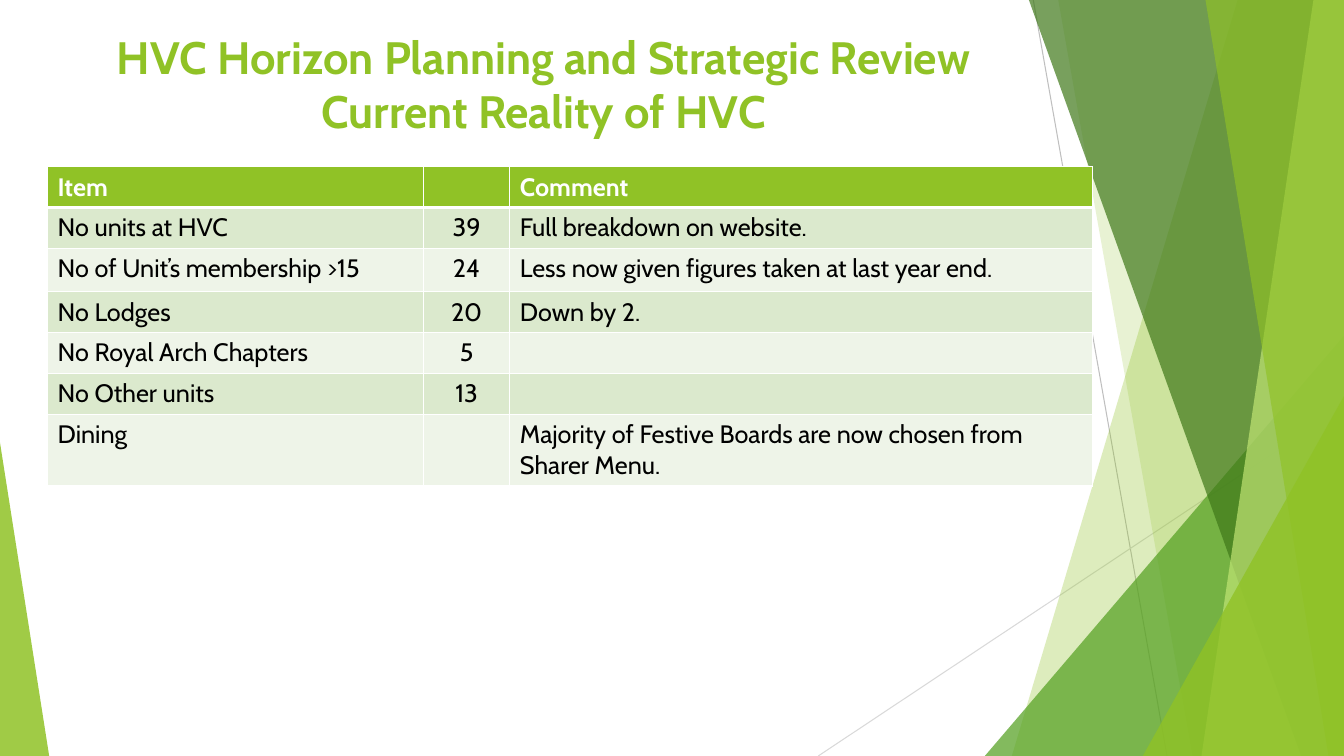
from lxml import etree
from pptx import Presentation
from pptx.dml.color import RGBColor
from pptx.enum import shapes, text
from pptx.oxml import ns
from pptx.util import Cm, Pt

LIME = RGBColor(0x90, 0xC2, 0x26)
PALE_LIME = RGBColor(0xC0, 0xE4, 0x74)
GREEN = RGBColor(0x54, 0xA0, 0x21)
FOREST = RGBColor(0x3F, 0x78, 0x19)
DARK_BAND = RGBColor(0xDB, 0xE9, 0xCD)
LIGHT_BAND = RGBColor(0xEE, 0xF4, 0xE8)
GREY = RGBColor(0xBF, 0xBF, 0xBF)
LIGHT_GREY = RGBColor(0xD9, 0xD9, 0xD9)
WHITE = RGBColor(0xFF, 0xFF, 0xFF)
BLACK = RGBColor(0, 0, 0)
WIDTH, HEIGHT = 33.87, 19.05


def write(frame, words, size=18, color=BLACK, bold=False, align=text.PP_ALIGN.LEFT):
    paragraph = frame.paragraphs[0]
    paragraph.text = words
    paragraph.alignment = align
    paragraph.font.size = Pt(size)
    for run in paragraph.runs:
        run.font.name = "Cabin"
        run.font.size = Pt(size)
        run.font.bold = bold
        run.font.color.rgb = color


def paint(facet, color, opacity):
    facet.shadow.inherit = False
    facet.line.fill.background()
    facet.fill.solid()
    facet.fill.fore_color.rgb = color
    tint = facet.fill._xPr.find(ns.qn("a:solidFill"))[0]
    etree.SubElement(tint, ns.qn("a:alpha"), val=str(opacity * 1000))


deck = Presentation()
deck.slide_width, deck.slide_height = Cm(WIDTH), Cm(HEIGHT)
slide = deck.slides.add_slide(deck.slide_layouts[5])

for x1, y1, x2, y2, color in [
    (26.04, 0, 29.41, HEIGHT, GREY),
    (WIDTH, 10.24, 20.62, HEIGHT, LIGHT_GREY),
]:
    ray = slide.shapes.add_connector(
        shapes.MSO_CONNECTOR.STRAIGHT, Cm(x1), Cm(y1), Cm(x2), Cm(y2))
    ray.line.color.rgb = color
    ray.line.width = Pt(0.75)
    etree.SubElement(ray._element.spPr, ns.qn("a:effectLst"))

facets = [
    ("band", 31.19, 25.5, LIME, 30),
    ("band", 26.67, 30.05, LIME, 20),
    ("triangle", 24.82, 8.46, 9.05, 1, GREEN, 72),
    ("band", 25.93, 32.79, FOREST, 70),
    ("band", 33.1, 30.28, PALE_LIME, 70),
    ("band", 30.38, 33.48, LIME, 65),
    ("triangle", 28.8, 9.98, 5.07, 1, LIME, 80),
    ("triangle", 0, 11.15, 1.24, 0, LIME, 85),
]
for kind, *place, color, opacity in facets:
    if kind == "band":
        top_x, bottom_x = place
        outline = slide.shapes.build_freeform(Cm(top_x), Cm(0))
        outline.add_line_segments([
            (Cm(WIDTH), Cm(0)), (Cm(WIDTH), Cm(HEIGHT)), (Cm(bottom_x), Cm(HEIGHT))])
        facet = outline.convert_to_shape()
    else:
        left, top, width, apex = place
        facet = slide.shapes.add_shape(
            shapes.MSO_SHAPE.ISOSCELES_TRIANGLE,
            Cm(left), Cm(top), Cm(width), Cm(HEIGHT - top))
        facet.adjustments[0] = apex
    paint(facet, color, opacity)

heading = slide.shapes.title
heading.left, heading.top, heading.width, heading.height = Cm(0.76), Cm(0.6), Cm(25.88), Cm(2.54)
heading.text_frame.word_wrap = True
heading.text_frame.auto_size = text.MSO_AUTO_SIZE.NONE
heading.text_frame.vertical_anchor = text.MSO_ANCHOR.TOP
write(heading.text_frame, "HVC Horizon Planning and Strategic Review\vCurrent Reality of HVC",
      size=32.4, color=LIME, bold=True, align=text.PP_ALIGN.CENTER)
slide.shapes._spTree.append(heading._element)

units = [
    ("Item", "", "Comment"),
    ("No units at HVC", "39", "Full breakdown on website."),
    ("No of Unit’s membership >15", "24", "Less now given figures taken at last year end."),
    ("No Lodges", "20", "Down by 2."),
    ("No Royal Arch Chapters", "5", ""),
    ("No Other units", "13", ""),
    ("Dining", "", "Majority of Festive Boards are now chosen from Sharer Menu."),
]
column_widths = [9.47, 2.18, 14.68]
row_heights = [1.03, 1.03, 1.09, 1.03, 1.03, 1.03, 1.8]
review = slide.shapes.add_table(
    len(units), len(column_widths), Cm(1.2), Cm(4.2),
    Cm(sum(column_widths)), Cm(sum(row_heights))).table
for column, width in zip(review.columns, column_widths):
    column.width = Cm(width)
for row, height in zip(review.rows, row_heights):
    row.height = Cm(height)

for r, entries in enumerate(units):
    header = r == 0
    for c, entry in enumerate(entries):
        cell = review.cell(r, c)
        centred = c == 1
        write(cell.text_frame, entry, color=WHITE if header else BLACK, bold=header,
              align=text.PP_ALIGN.CENTER if centred else text.PP_ALIGN.LEFT)
        for side in "LRTB":
            thick = (r, side) in [(0, "B"), (1, "T")]
            border = etree.SubElement(cell._tc.get_or_add_tcPr(), ns.qn(f"a:ln{side}"),
                                      w=str(Pt(3 if thick else 1)))
            stroke = etree.SubElement(border, ns.qn("a:solidFill"))
            etree.SubElement(stroke, ns.qn("a:srgbClr"), val=str(WHITE))
        cell.fill.solid()
        cell.fill.fore_color.rgb = LIME if header else DARK_BAND if r % 2 else LIGHT_BAND

deck.save("out.pptx")
